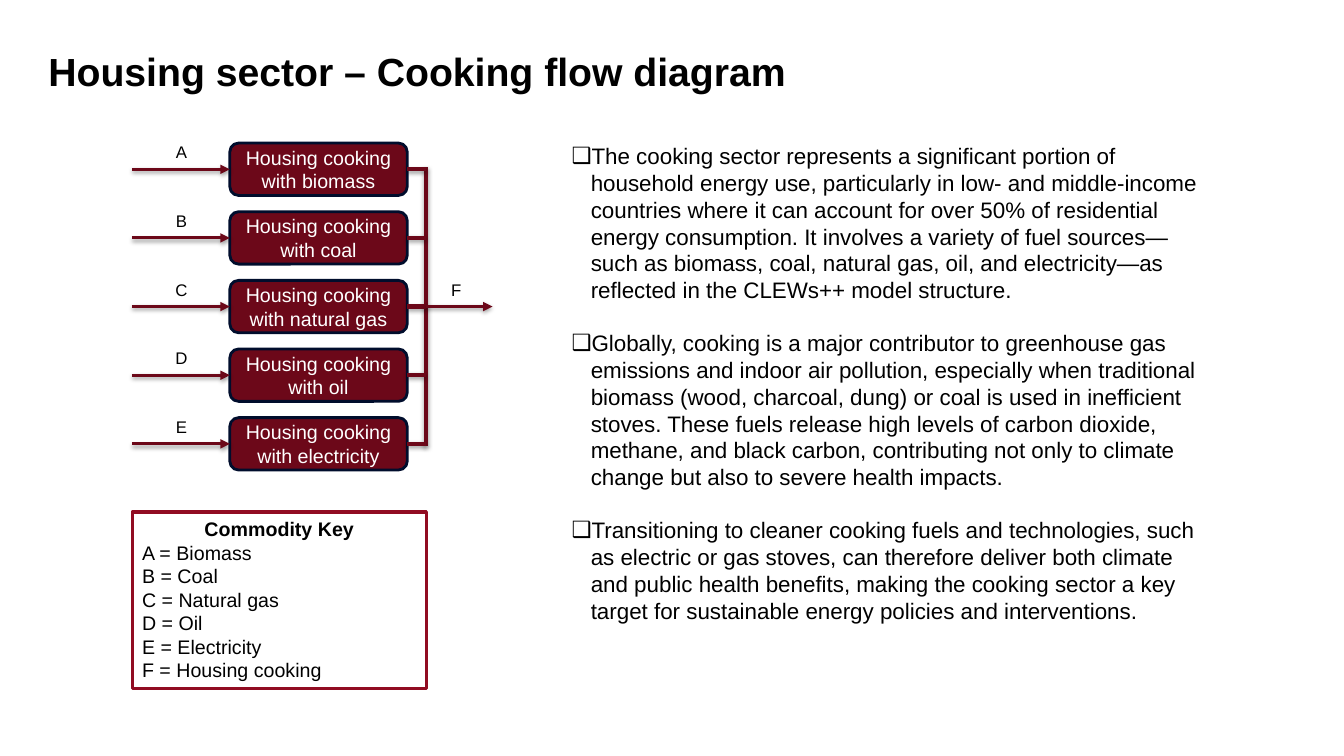
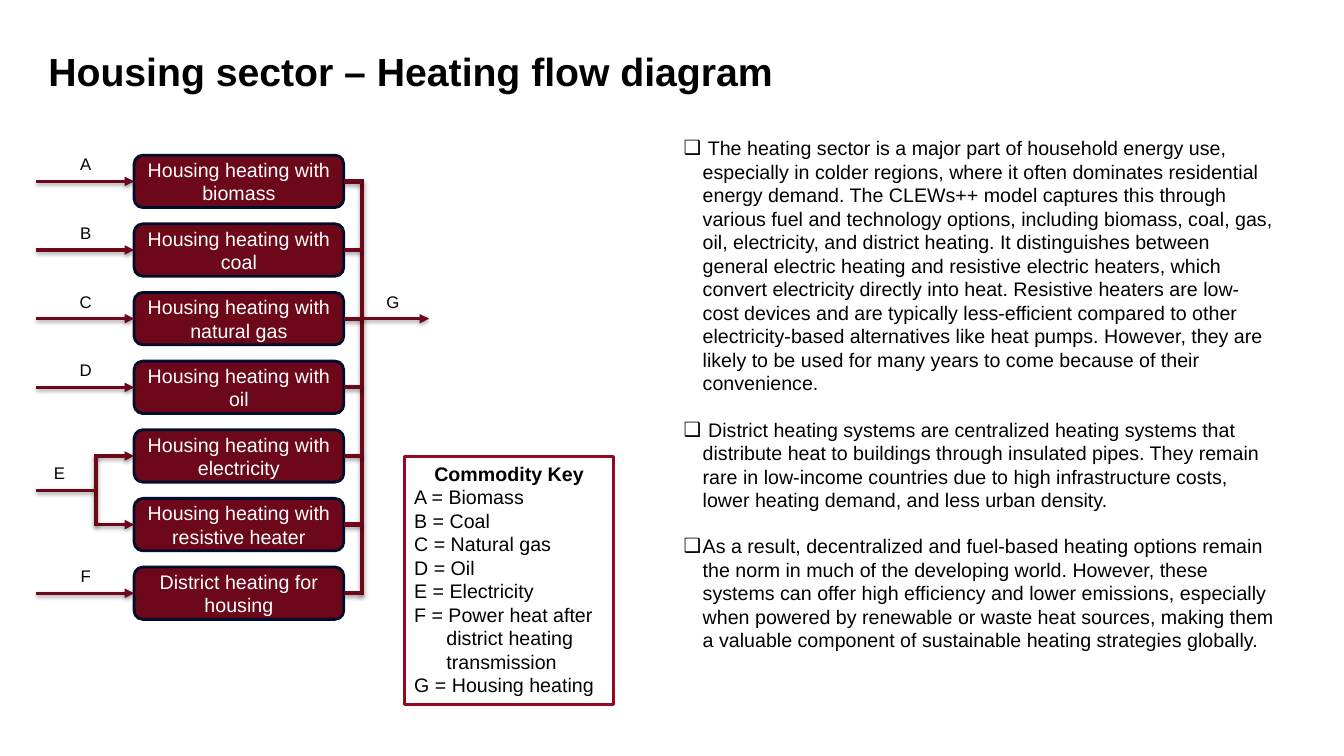
import pptx
import pptx.util
import pptx.dml.color
import pptx.enum.shapes
import pptx.enum.text
import pptx.oxml
from pptx.oxml.ns import nsdecls, qn

Pt = pptx.util.Pt
Align = pptx.enum.text.PP_ALIGN
Anchor = pptx.enum.text.MSO_ANCHOR
AutoSize = pptx.enum.text.MSO_AUTO_SIZE
Shape = pptx.enum.shapes.MSO_SHAPE

W, H = pptx.util.Inches(13.33), pptx.util.Inches(7.5)
COLORS = {"text": "000000", "light": "FFFFFF", "flow": "6C0819",
          "box_edge": "000D2C", "key_edge": "910C22"}
FONT = "Arial"
LINE_HEIGHT = 1.15  # one blank line, relative to the font size


def x(share):
    """Length as a percentage of the slide width."""
    return round(W * share / 100)


def y(share):
    """Length as a percentage of the slide height."""
    return round(H * share / 100)


PITCH, BOX_H = y(9.08), y(6.93)
FEED, FORK, STUB, OUTPUT = x(7.28), x(2.85), x(1.37), x(4.98)
LABEL_W, LABEL_H, LABEL_RISE, LABEL_INSET = x(5.4), y(4), y(4.27), x(0.9)
TITLE_AREA = (x(2.85), y(2.13), x(88.37), y(11.07))
OUTPUT_ROW = 2
THIN, THICK = 2.25, 3

TITLE = {"size": 28, "bold": True}
BOX = {"size": 14, "color": "light"}
LABEL = {"size": 12}
KEY = {"size": 14}

COOKING = {
    "title": "Housing sector – Cooking flow diagram",
    "body_area": (x(41.78), y(18.13), x(49.36), y(66)),
    "body_size": 16,
    "hang": 0.22,
    "body": [
        "The cooking sector represents a significant portion of household energy use, "
        "particularly in low- and middle-income countries where it can account for over "
        "50% of residential energy consumption. It involves a variety of fuel "
        "sources—such as biomass, coal, natural gas, oil, and electricity—as reflected "
        "in the CLEWs++ model structure.",
        "Globally, cooking is a major contributor to greenhouse gas emissions and indoor "
        "air pollution, especially when traditional biomass (wood, charcoal, dung) or "
        "coal is used in inefficient stoves. These fuels release high levels of carbon "
        "dioxide, methane, and black carbon, contributing not only to climate change but "
        "also to severe health impacts.",
        "Transitioning to cleaner cooking fuels and technologies, such as electric or gas "
        "stoves, can therefore deliver both climate and public health benefits, making "
        "the cooking sector a key target for sustainable energy policies and "
        "interventions.",
    ],
    "boxes_at": (x(17.1), y(18.93), x(13.2)),
    "feeds": [
        ("A", ["Housing cooking with biomass"]),
        ("B", ["Housing cooking with coal"]),
        ("C", ["Housing cooking with natural gas"]),
        ("D", ["Housing cooking with oil"]),
        ("E", ["Housing cooking with electricity"]),
    ],
    "output": "F",
    "key_area": (x(9.83), y(67.73), x(21.9), y(23.33)),
    "key": ["A = Biomass", "B = Coal", "C = Natural gas", "D = Oil",
            "E = Electricity", "F = Housing cooking"],
}

HEATING = {
    "title": "Housing sector – Heating flow diagram",
    "body_area": (x(50.11), y(17.33), x(45.46), y(70.53)),
    "body_size": 14,
    "hang": 0.2,
    "body": [
        " The heating sector is a major part of household energy use, especially in colder "
        "regions, where it often dominates residential energy demand. The CLEWs++ model "
        "captures this through various fuel and technology options, including biomass, "
        "coal, gas, oil, electricity, and district heating. It distinguishes between "
        "general electric heating and resistive electric heaters, which convert "
        "electricity directly into heat. Resistive heaters are low-cost devices and are "
        "typically less-efficient compared to other electricity-based alternatives like "
        "heat pumps. However, they are likely to be used for many years to come because "
        "of their convenience.",
        " District heating systems are centralized heating systems that distribute heat to "
        "buildings through insulated pipes. They remain rare in low-income countries due "
        "to high infrastructure costs, lower heating demand, and less urban density.",
        "As a result, decentralized and fuel-based heating options remain the norm in much "
        "of the developing world. However, these systems can offer high efficiency and "
        "lower emissions, especially when powered by renewable or waste heat sources, "
        "making them a valuable component of sustainable heating strategies globally.",
    ],
    "boxes_at": (x(9.98), y(20.53), x(15.6)),
    "feeds": [
        ("A", ["Housing heating with biomass"]),
        ("B", ["Housing heating with coal"]),
        ("C", ["Housing heating with natural gas"]),
        ("D", ["Housing heating with oil"]),
        ("E", ["Housing heating with electricity",
               "Housing heating with resistive heater"]),
        ("F", ["District heating for housing"]),
    ],
    "output": "G",
    "key_area": (x(30.08), y(60.4), x(15.6), y(32.8)),
    "key": ["A = Biomass", "B = Coal", "C = Natural gas", "D = Oil", "E = Electricity",
            "F = Power heat after district heating transmission",
            "G = Housing heating"],
}


def rgb(name):
    return pptx.dml.color.RGBColor.from_string(COLORS[name])


def set_attrs(obj, values):
    for name, value in values.items():
        setattr(obj, name, value)


def place(sp, area):
    set_attrs(sp, dict(zip(("left", "top", "width", "height"), area)))


def add_run(p, text, size, bold=False, color="text"):
    r = p.add_run()
    r.text = text
    set_attrs(r.font, {"name": FONT, "size": Pt(size), "bold": bold})
    r.font.color.rgb = rgb(color)


def paragraphs(tf, count):
    return [tf.paragraphs[0]] + [tf.add_paragraph() for _ in range(count - 1)]


def set_indent(p, margin, hang):
    """Hanging indent, both lengths in inches."""
    pPr = p._p.get_or_add_pPr()
    pPr.set("marL", str(pptx.util.Inches(margin)))
    pPr.set("indent", str(-pptx.util.Inches(hang)))
    return pPr


def add_bullet(p, hang):
    pPr = set_indent(p, 0.19, hang)
    for xml in (f'<a:buClr {nsdecls("a")}><a:srgbClr val="{COLORS["text"]}"/></a:buClr>',
                f'<a:buFont {nsdecls("a")} typeface="{FONT}"/>',
                f'<a:buChar {nsdecls("a")} char="❑"/>'):
        pPr.append(pptx.oxml.parse_xml(xml))


def fill_title(slide, text):
    sp = slide.shapes.title
    place(sp, TITLE_AREA)
    set_attrs(sp.text_frame, {"vertical_anchor": Anchor.BOTTOM, "word_wrap": True,
                              "auto_size": AutoSize.NONE})
    p = sp.text_frame.paragraphs[0]
    set_attrs(p, {"alignment": Align.LEFT, "line_spacing": 0.9})
    add_run(p, text, **TITLE)


def fill_body(slide, area, texts, size, hang):
    sp = slide.placeholders[1]
    place(sp, area)
    tf = sp.text_frame
    set_attrs(tf, {"vertical_anchor": Anchor.TOP, "word_wrap": True,
                   "auto_size": AutoSize.NONE})
    for i, (p, text) in enumerate(zip(paragraphs(tf, len(texts)), texts)):
        p.space_before = Pt(round(size * LINE_HEIGHT, 1) if i else 0)
        add_bullet(p, hang)
        add_run(p, text, size)


def add_panel(slide, kind, area, edge, width, fill=None):
    sp = slide.shapes.add_shape(kind, *area)
    sp.shadow.inherit = False
    if fill:
        sp.fill.solid()
        sp.fill.fore_color.rgb = rgb(fill)
    else:
        sp.fill.background()
    sp.line.color.rgb = rgb(edge)
    sp.line.width = Pt(width)
    sp.text_frame.word_wrap = True
    return sp


def add_box(slide, area, text):
    sp = add_panel(slide, Shape.ROUNDED_RECTANGLE, area, "box_edge", 2, "flow")
    sp.text_frame.vertical_anchor = Anchor.MIDDLE
    p = sp.text_frame.paragraphs[0]
    p.alignment = Align.CENTER
    add_run(p, text, **BOX)
    return sp


def add_key(slide, area, entries):
    sp = add_panel(slide, Shape.RECTANGLE, area, "key_edge", 2.25)
    tf = sp.text_frame
    set_attrs(tf, {"vertical_anchor": Anchor.TOP,
                   "auto_size": AutoSize.SHAPE_TO_FIT_TEXT})
    heading, *rest = paragraphs(tf, len(entries) + 1)
    heading.alignment = Align.CENTER
    add_run(heading, "Commodity Key", bold=True, **KEY)
    for p, entry in zip(rest, entries):
        p.alignment = Align.LEFT
        set_indent(p, 0.32, 0.32)
        add_run(p, entry, **KEY)


def add_label(slide, right, line_y, text):
    """Letter above a line, in a box that ends at the given right edge."""
    sp = slide.shapes.add_textbox(right - LABEL_W, line_y - LABEL_RISE, LABEL_W, LABEL_H)
    set_attrs(sp.text_frame, {"word_wrap": True, "auto_size": AutoSize.SHAPE_TO_FIT_TEXT})
    p = sp.text_frame.paragraphs[0]
    p.alignment = Align.CENTER
    add_run(p, text, **LABEL)


def add_line(slide, start, end, width, arrow=False):
    line = slide.shapes.add_connector(pptx.enum.shapes.MSO_CONNECTOR.STRAIGHT, *start, *end)
    line.line.color.rgb = rgb("flow")
    line.line.width = Pt(width)
    spPr = line._element.spPr
    if arrow:
        spPr.find(qn("a:ln")).append(
            pptx.oxml.parse_xml(f'<a:tailEnd {nsdecls("a")} type="triangle"/>'))
    spPr.append(pptx.oxml.parse_xml(
        f'<a:effectLst {nsdecls("a")}><a:outerShdw blurRad="{Pt(3.1)}" dist="{Pt(1.6)}" '
        f'dir="5400000" rotWithShape="0"><a:srgbClr val="{COLORS["text"]}">'
        '<a:alpha val="37000"/></a:srgbClr></a:outerShdw></a:effectLst>'))
    return line


def middle(box):
    return box.top + box.height // 2


def add_feed(slide, letter, boxes):
    """Labelled input arrow, forked when it serves several boxes."""
    left = boxes[0].left
    start, fork = left - FEED, left - FORK
    forked = len(boxes) > 1
    for box in boxes:
        arrow = add_line(slide, (fork if forked else start, middle(box)),
                         (left, middle(box)), THIN, arrow=True)
        arrow.end_connect(box, 1)
    top, bottom = middle(boxes[0]), middle(boxes[-1])
    line_y = (top + bottom) // 2
    if forked:
        overlap = Pt(THIN / 2)
        add_line(slide, (fork, top - overlap), (fork, bottom + overlap), THICK)
        add_line(slide, (start, line_y), (fork, line_y), THIN)
    add_label(slide, fork if forked else left - LABEL_INSET, line_y, letter)


def add_flow(slide, boxes_at, feeds, output):
    left, top, width = boxes_at
    boxes = []
    for letter, names in feeds:
        fed = [add_box(slide, (left, top + (len(boxes) + i) * PITCH, width, BOX_H), name)
               for i, name in enumerate(names)]
        add_feed(slide, letter, fed)
        boxes += fed
    bus = left + width + STUB
    overlap = Pt(THICK / 2)
    add_line(slide, (bus, middle(boxes[0]) - overlap),
             (bus, middle(boxes[-1]) + overlap), THICK)
    for box in boxes:
        stub = add_line(slide, (left + width, middle(box)), (bus, middle(box)), THICK)
        stub.begin_connect(box, 3)
    out_y = middle(boxes[OUTPUT_ROW])
    add_line(slide, (bus, out_y), (bus + OUTPUT, out_y), THIN, arrow=True)
    add_label(slide, bus + OUTPUT, out_y, output)


def main():
    prs = pptx.Presentation()
    prs.slide_width, prs.slide_height = W, H
    for sector in (COOKING, HEATING):
        slide = prs.slides.add_slide(prs.slide_layouts[1])
        fill_title(slide, sector["title"])
        fill_body(slide, sector["body_area"], sector["body"],
                  sector["body_size"], sector["hang"])
        add_flow(slide, sector["boxes_at"], sector["feeds"], sector["output"])
        add_key(slide, sector["key_area"], sector["key"])
    prs.save("out.pptx")


if __name__ == "__main__":
    main()
